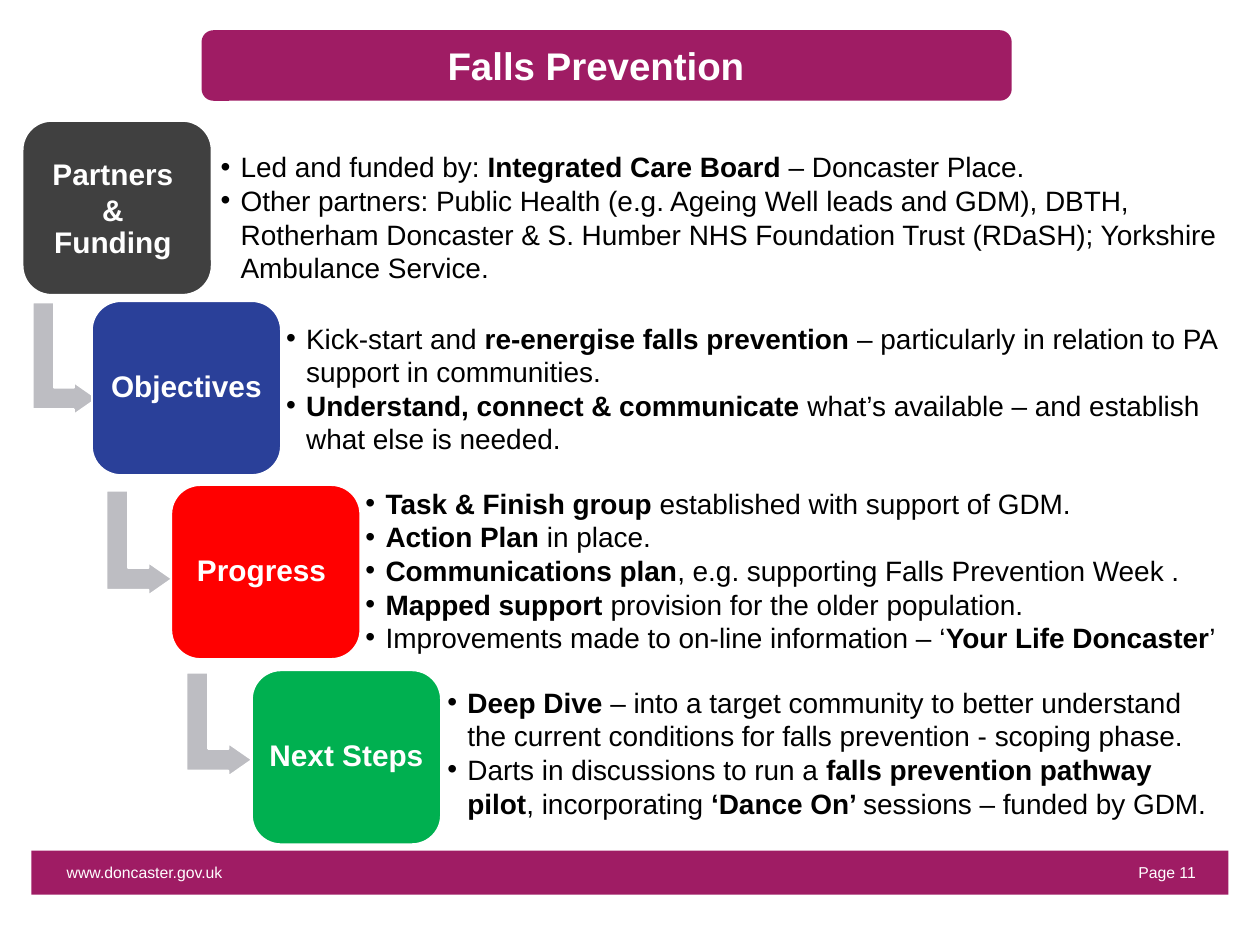
from dataclasses import dataclass

from lxml.etree import SubElement
from pptx import Presentation
from pptx.dml.color import RGBColor
from pptx.enum.shapes import MSO_SHAPE as Preset
from pptx.enum.text import MSO_ANCHOR as Anchor, MSO_AUTO_SIZE as AutoSize, PP_ALIGN as Align
from pptx.oxml.ns import qn
from pptx.util import Pt

EMU_PER_PX = 9144


@dataclass(frozen=True)
class Theme:
    font: str = "Arial"
    brand: str = "9F1C64"
    white: str = "FFFFFF"
    black: str = "000000"
    arrow: str = "BDBDC2"
    partners: str = "404040"
    objectives: str = "2A4099"
    progress: str = "FF0000"
    next_steps: str = "00B050"
    title_size: int = 22
    label_size: int = 17
    body_size: int = 16
    footer_size: int = 9


THEME = Theme()

STAGES = [
    ((18, 96), THEME.partners, ["Partners ", "& ", "Funding "], (160, 119, 822, 131), [
        "Led and funded by: |Integrated Care Board |– Doncaster Place.",
        "Other partners: Public Health (e.g. Ageing Well leads and GDM), DBTH, "
        "Rotherham Doncaster & S. Humber NHS Foundation Trust (RDaSH); "
        "Yorkshire Ambulance Service.",
    ]),
    ((73, 239), THEME.objectives, ["Objectives "], (212, 255, 789, 136), [
        "Kick-start and |re-energise falls prevention |– particularly in relation to PA "
        "support in communities.",
        "|Understand, connect & communicate |what’s available – and establish "
        "what else is needed.",
    ]),
    ((136, 385), THEME.progress, ["Progress "], (275, 386, 725, 136), [
        "|Task & Finish group |established with support of GDM.",
        "|Action Plan |in place.",
        "|Communications plan|, e.g. supporting Falls Prevention Week .",
        "|Mapped support |provision for the older population.",
        "Improvements made to on-line information – ‘|Your Life Doncaster|’",
    ]),
    ((200, 532), THEME.next_steps, ["Next Steps "], (340, 544, 628, 136), [
        "|Deep Dive |– into a target community to better understand the current "
        "conditions for falls prevention - scoping phase.",
        "Darts in discussions to run a |falls prevention pathway pilot|, incorporating "
        "|‘Dance On’ |sessions – funded by GDM.",
    ]),
]

ARROWS = [(7, 259, 89, 51), (69, 405, 83, 52), (133, 549, 82, 52)]


def px(*lengths):
    return [round(length * EMU_PER_PX) for length in lengths]


def add_bullet(paragraph):
    properties = paragraph._p.get_or_add_pPr()
    margin, indent = px(31, -16)
    properties.set("marL", str(margin))
    properties.set("indent", str(indent))
    SubElement(properties, qn("a:buFont"), typeface=THEME.font)
    SubElement(properties, qn("a:buChar"), char="•")


def write_text(shape, lines, size, color=THEME.white, bold=False, align=Align.LEFT,
               anchor=Anchor.MIDDLE, insets=(0, 0, 0, 0), bullets=False, last_spacing=1.0):
    frame = shape.text_frame
    frame.word_wrap = True
    frame.auto_size = AutoSize.NONE
    frame.vertical_anchor = anchor
    (frame.margin_left, frame.margin_top,
     frame.margin_right, frame.margin_bottom) = px(*insets)
    for index, line in enumerate(lines):
        paragraph = frame.paragraphs[0] if index == 0 else frame.add_paragraph()
        paragraph.alignment = align
        paragraph.line_spacing = last_spacing if line == lines[-1] else 1.0
        if bullets:
            add_bullet(paragraph)
        for part, text in enumerate(line.split("|")):
            if not text:
                continue
            run = paragraph.add_run()
            run.text = text
            run.font.name = THEME.font
            run.font.size = Pt(size)
            run.font.bold = bold or part % 2 == 1
            run.font.color.rgb = RGBColor.from_string(color)


def add_text(slide, box, lines, size, **text_format):
    shape = slide.shapes.add_textbox(*px(*box))
    write_text(shape, lines, size, **text_format)


def add_block(slide, preset, box, fill, outline=None):
    shape = slide.shapes.add_shape(preset, *px(*box))
    shape.shadow.inherit = False
    shape.fill.solid()
    shape.fill.fore_color.rgb = RGBColor.from_string(fill)
    if outline:
        shape.line.color.rgb = RGBColor.from_string(outline)
        shape.line.width = Pt(1)
    else:
        shape.line.fill.background()
    return shape


def place_title(slide, box):
    banner = add_block(slide, Preset.ROUNDED_RECTANGLE, box, THEME.brand)
    title = slide.shapes.title
    title.left, title.top, title.width, title.height = px(*box)
    write_text(title, ["Falls Prevention"], THEME.title_size, bold=True,
               align=Align.CENTER, insets=(10, 5, 27, 5))
    banner._element.addnext(title._element)


def place_footer(slide, box):
    left, top, width, height = box
    add_block(slide, Preset.RECTANGLE, box, THEME.brand)
    add_text(slide, (left + 28, top + 12, 140, 11), ["www.doncaster.gov.uk"],
             THEME.footer_size)
    add_text(slide, (left + width - 251, top + 6, 225, 22), ["Page 11"],
             THEME.footer_size, align=Align.RIGHT)


def place_arrow(slide, box):
    arrow = add_block(slide, Preset.BENT_UP_ARROW, box, THEME.arrow, THEME.white)
    arrow.rotation = 90
    for index, value in enumerate((0.33, 0.25, 0.36)):
        arrow.adjustments[index] = value


def place_stage(slide, box, color, label, text_box, points):
    card = add_block(slide, Preset.ROUNDED_RECTANGLE, box, color, THEME.white)
    write_text(card, label, THEME.label_size, bold=True, align=Align.CENTER,
               insets=(7, 7, 7, 7), last_spacing=0.9)
    add_text(slide, text_box, points, THEME.body_size, color=THEME.black,
             anchor=Anchor.TOP, bullets=True)


def main():
    presentation = Presentation()
    presentation.slide_width, presentation.slide_height = px(1000, 750)
    slide = presentation.slides.add_slide(presentation.slide_layouts[5])
    place_title(slide, (160, 24, 643, 56))
    place_footer(slide, (25, 675, 950, 35))
    for box in ARROWS:
        place_arrow(slide, box)
    for corner, color, label, text_box, points in STAGES:
        place_stage(slide, (*corner, 150, 138), color, label, text_box, points)
    presentation.save("out.pptx")


if __name__ == "__main__":
    main()
